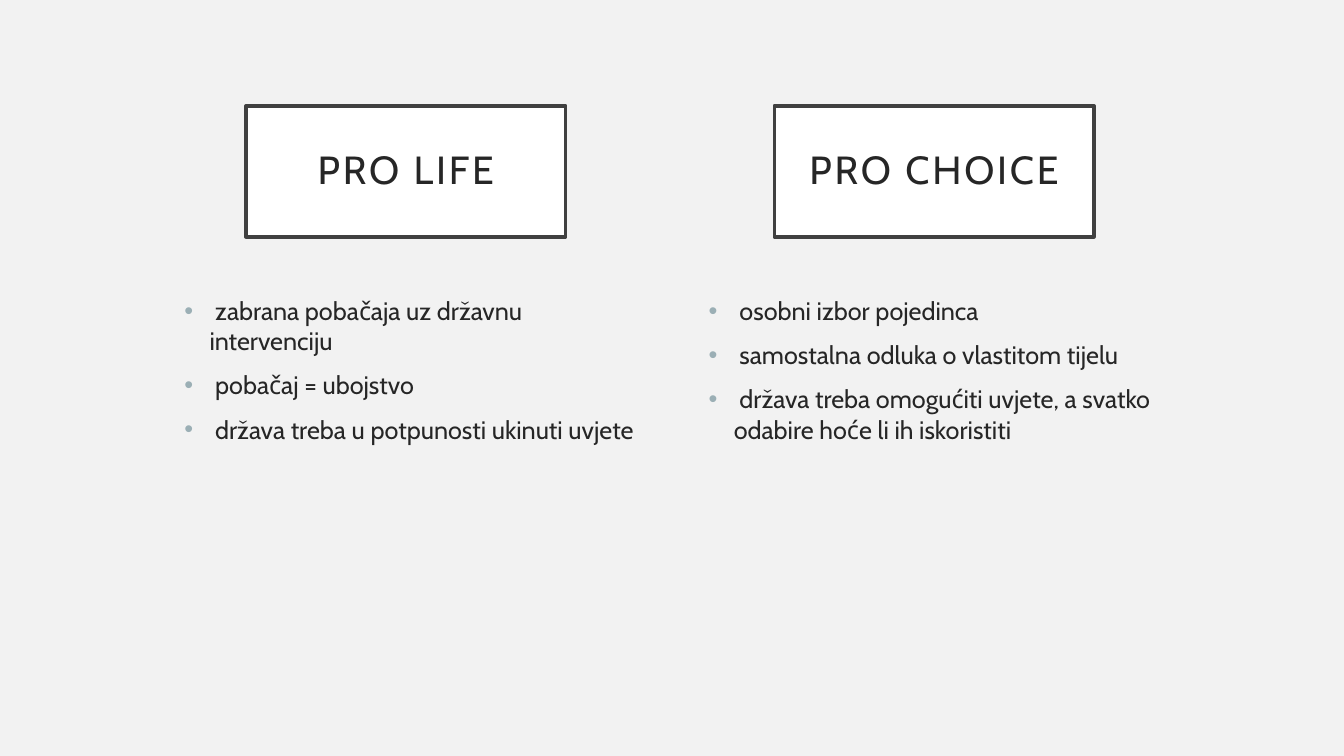
import pptx
import pptx.dml.color
import pptx.enum.shapes
import pptx.enum.text
import pptx.oxml
import pptx.oxml.ns
import pptx.util
from pptx.util import Inches


def color(value):
    return pptx.dml.color.RGBColor.from_string(value)


class SlideBuilder:
    font = "Cabin"
    text_color = "262626"
    bullet_color = "9BAFB5"
    border_color = "404040"

    def __init__(self, slide, background):
        self.slide = slide
        slide.background.fill.solid()
        slide.background.fill.fore_color.rgb = color(background)

    def format_runs(self, paragraph, size):
        for run in paragraph.runs:
            run.font.name = self.font
            run.font.size = pptx.util.Pt(size)
            run.font.color.rgb = color(self.text_color)

    def heading(self, left, text):
        shape = self.slide.shapes.add_shape(
            pptx.enum.shapes.MSO_SHAPE.RECTANGLE,
            Inches(left), Inches(1.05), Inches(3.17), Inches(1.3),
        )
        shape.shadow.inherit = False
        shape.fill.solid()
        shape.fill.fore_color.rgb = color("FFFFFF")
        shape.line.color.rgb = color(self.border_color)
        shape.line.width = pptx.util.Pt(2.5)
        frame = shape.text_frame
        frame.text = text
        frame.word_wrap = True
        frame.vertical_anchor = pptx.enum.text.MSO_ANCHOR.MIDDLE
        frame.margin_left = frame.margin_right = Inches(0.2)
        frame.margin_top = frame.margin_bottom = Inches(0.2)
        paragraph = frame.paragraphs[0]
        paragraph.alignment = pptx.enum.text.PP_ALIGN.CENTER
        paragraph.line_spacing = 0.9
        self.format_runs(paragraph, 28)
        for run in paragraph.runs:
            run.font._element.set("spc", "200")

    def bullet_list(self, left, items):
        shape = self.slide.shapes.add_textbox(
            Inches(left), Inches(2.88), Inches(4.67), Inches(3.39)
        )
        frame = shape.text_frame
        frame.word_wrap = True
        frame.text = "\n".join(items)
        for paragraph in frame.paragraphs:
            paragraph.space_before = pptx.util.Pt(10)
            self.format_runs(paragraph, 18)
            self.add_bullet(paragraph)

    def add_bullet(self, paragraph):
        properties = paragraph._p.get_or_add_pPr()
        properties.set("marL", str(Inches(0.25)))
        properties.set("indent", str(Inches(-0.25)))
        namespace = pptx.oxml.ns.nsdecls("a")
        for xml in (
            f'<a:buClr {namespace}><a:srgbClr val="{self.bullet_color}"/></a:buClr>',
            f'<a:buFont {namespace} typeface="Arial"/>',
            f'<a:buChar {namespace} char="•"/>',
        ):
            properties.append(pptx.oxml.parse_xml(xml))


def main():
    presentation = pptx.Presentation()
    presentation.slide_width = Inches(13.33)
    presentation.slide_height = Inches(7.5)
    slide = presentation.slides.add_slide(presentation.slide_layouts[6])
    builder = SlideBuilder(slide, "F2F2F2")
    columns = [
        (2.44, 1.73, "PRO LIFE", [
            " zabrana pobačaja uz državnu intervenciju",
            " pobačaj = ubojstvo",
            " država treba u potpunosti ukinuti uvjete",
        ]),
        (7.68, 6.93, "PRO CHOICE", [
            " osobni izbor pojedinca",
            " samostalna odluka o vlastitom tijelu",
            " država treba omogućiti uvjete, a svatko odabire hoće li ih iskoristiti",
        ]),
    ]
    for heading_left, list_left, title, items in columns:
        builder.heading(heading_left, title)
        builder.bullet_list(list_left, items)
    presentation.save("out.pptx")


if __name__ == "__main__":
    main()
